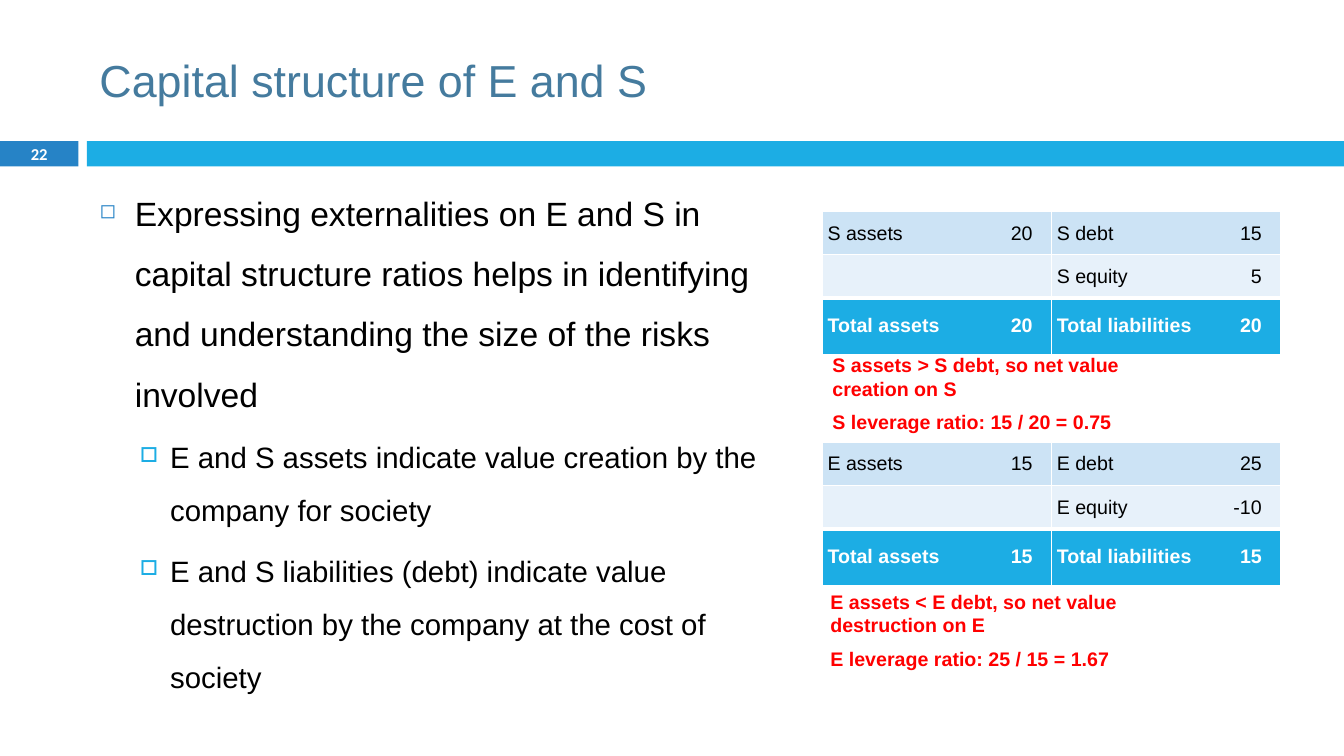
from lxml import etree
from pptx import Presentation
from pptx.dml.color import RGBColor
from pptx.enum import shapes, text
from pptx.oxml.ns import qn
from pptx.util import Pt

WHITE = RGBColor(0xFF, 0xFF, 0xFF)
BLACK = RGBColor(0x00, 0x00, 0x00)
RED = RGBColor(0xFF, 0x00, 0x00)
TITLE = RGBColor(0x45, 0x7B, 0x9E)
BLUE = RGBColor(0x26, 0x83, 0xC6)
CYAN = RGBColor(0x1C, 0xAD, 0xE4)
PALE = RGBColor(0xCC, 0xE3, 0xF5)
PALER = RGBColor(0xE7, 0xF1, 0xFA)
LEFT, CENTER, RIGHT = text.PP_ALIGN.LEFT, text.PP_ALIGN.CENTER, text.PP_ALIGN.RIGHT


def write(p, words, size=14, color=BLACK, bold=False, font="Arial",
          align=LEFT, before=0, spacing=1.0):
    p.alignment = align
    p.space_before = Pt(before)
    p.line_spacing = spacing
    r = p.add_run()
    r.text = words
    r.font.size = Pt(size)
    r.font.name = font
    r.font.bold = bold
    r.font.color.rgb = color


def textbox(x, y, w, h, anchor=text.MSO_ANCHOR.MIDDLE, wrap=True):
    tf = s.shapes.add_textbox(Pt(x), Pt(y), Pt(w), Pt(h)).text_frame
    tf.word_wrap = wrap
    tf.vertical_anchor = anchor
    return tf


prs = Presentation()
prs.slide_width, prs.slide_height = Pt(960), Pt(540)
s = prs.slides.add_slide(prs.slide_layouts[6])

for x, w, color in [(0, 56, BLUE), (62, 898, CYAN)]:
    sp = s.shapes.add_shape(shapes.MSO_SHAPE.RECTANGLE, Pt(x), Pt(100.8), Pt(w), Pt(18))
    sp.shadow.inherit = False
    sp.fill.solid()
    sp.fill.fore_color.rgb = color
    sp.line.fill.background()

tf = textbox(64, 18, 856, 78)
write(tf.paragraphs[0], "Capital structure of E and S", size=32, color=TITLE)
tf = textbox(0, 100, 56, 19.5)
write(tf.paragraphs[0], "22", size=11.9, color=WHITE, bold=True, font="Calibri", align=CENTER)

body = [
    (0, "Expressing externalities on E and S in capital structure ratios helps in "
        "identifying and understanding the size of the risks involved"),
    (1, "E and S assets indicate value creation by the company for society"),
    (1, "E and S liabilities (debt) indicate value destruction by the company "
        "at the cost of society"),
]
levels = [(24, 7, 25.2, -25.2, BLUE, 60, "◻"), (21, 5.5, 50.4, -21.6, CYAN, 70, "□")]
tf = textbox(64, 119.5, 500, 388, anchor=text.MSO_ANCHOR.TOP)
for i, (level, words) in enumerate(body):
    size, before, margin, indent, color, scale, mark = levels[level]
    p = tf.add_paragraph() if i else tf.paragraphs[0]
    p.level = level
    write(p, words, size=size, before=before, spacing=1.5)
    pPr = p._p.get_or_add_pPr()
    pPr.set("marL", str(Pt(margin)))
    pPr.set("indent", str(Pt(indent)))
    buClr = etree.SubElement(pPr, qn("a:buClr"))
    etree.SubElement(buClr, qn("a:srgbClr"), val=str(color))
    etree.SubElement(pPr, qn("a:buSzPct"), val=str(scale * 1000))
    etree.SubElement(pPr, qn("a:buChar"), char=mark)

sheets = [
    (151.2, [["S assets", "20", "", "S debt", "15", ""],
             ["", "", "", "S equity", "5", ""],
             ["Total assets", "20", "", "Total liabilities", "20", ""]]),
    (316.1, [["E assets", "15", "", "E debt", "25", ""],
             ["", "", "", "E equity", "-10", ""],
             ["Total assets", "15", "", "Total liabilities", "15", ""]]),
]
widths = [115.2, 38.5, 9] * 2
heights = [30.8, 30.8, 40.3]
fills = [PALE, PALER, CYAN]
rules = [1, 1, 3, 1]
for y, rows in sheets:
    tbl = s.shapes.add_table(3, 6, Pt(587.5), Pt(y), Pt(sum(widths)), Pt(sum(heights))).table
    tbl.first_row = tbl.horz_banding = False
    for c, w in enumerate(widths):
        tbl.columns[c].width = Pt(w)
    for i, row in enumerate(rows):
        tbl.rows[i].height = Pt(heights[i])
        total = i == 2
        for c, words in enumerate(row):
            cell = tbl.cell(i, c)
            cell.margin_left = cell.margin_right = Pt(3.6)
            cell.margin_top = cell.margin_bottom = 0
            cell.vertical_anchor = text.MSO_ANCHOR.MIDDLE
            tcPr = cell._tc.get_or_add_tcPr()
            borders = {"L": int(c % 3 == 0), "R": int(c % 3 == 2),
                       "T": rules[i], "B": rules[i + 1]}
            for side, width in borders.items():
                ln = etree.SubElement(tcPr, qn("a:ln" + side), w=str(Pt(width)))
                if width:
                    fill = etree.SubElement(ln, qn("a:solidFill"))
                    etree.SubElement(fill, qn("a:srgbClr"), val=str(WHITE))
                else:
                    etree.SubElement(ln, qn("a:noFill"))
            cell.fill.solid()
            cell.fill.fore_color.rgb = fills[i]
            if words:
                write(cell.text_frame.paragraphs[0], words, bold=total,
                      color=WHITE if total else BLACK, align=RIGHT if c % 3 else LEFT)

notes = [
    (587.5, 259.2, ["S assets > S debt, so net value creation on S",
                    "S leverage ratio: 15 / 20 = 0.75"]),
    (586, 428.4, ["E assets < E debt, so net value destruction on E",
                  "E leverage ratio: 25 / 15 = 1.67"]),
]
for x, y, lines in notes:
    tf = textbox(x, y, 258.5, 43.2, wrap=False)
    for i, words in enumerate(lines):
        p = tf.add_paragraph() if i else tf.paragraphs[0]
        write(p, words, color=RED, bold=True, before=7)

prs.save("out.pptx")
